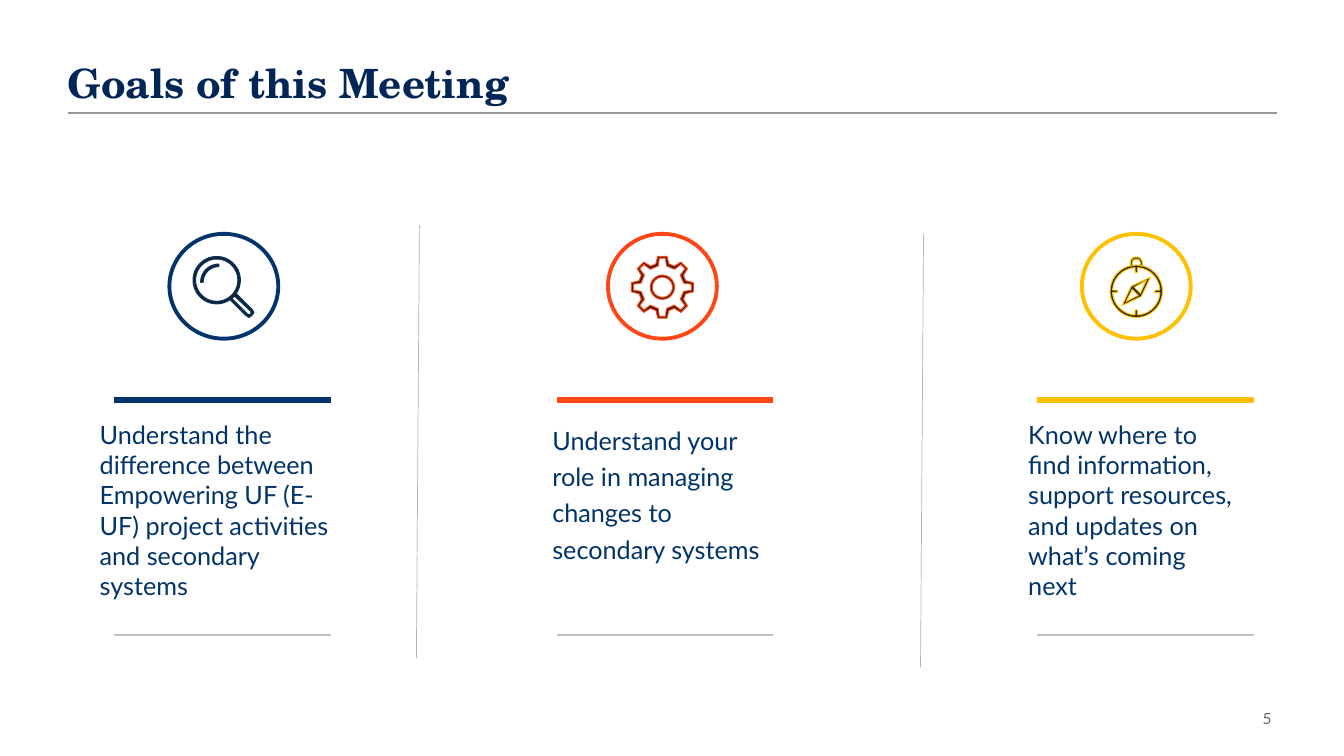
from math import cos, radians, sin

from lxml.etree import SubElement
from pptx import Presentation
from pptx.dml.color import RGBColor
from pptx.enum.shapes import MSO_CONNECTOR, MSO_SHAPE
from pptx.enum.text import MSO_ANCHOR, MSO_AUTO_SIZE, PP_ALIGN
from pptx.oxml.ns import qn
from pptx.util import Inches, Pt

NAVY, ORANGE, GOLD, INK = "00346A", "FF4616", "FFC000", "231F20"


def color(hex_value):
    return RGBColor.from_string(hex_value)


def add_line(page, start, end, hex_value, width):
    ends = [Inches(value) for value in (*start, *end)]
    line = page.shapes.add_connector(MSO_CONNECTOR.STRAIGHT, *ends)
    line.line.color.rgb = color(hex_value)
    line.line.width = Pt(width)
    SubElement(line._element.spPr, qn("a:effectLst"))


def paint(shape, fill, line, width):
    shape.shadow.inherit = False
    shape.fill.solid()
    shape.fill.fore_color.rgb = color(fill)
    shape.line.color.rgb = color(line)
    shape.line.width = Pt(width)


def write(frame, text, font, paragraph=None):
    para = frame.paragraphs[0]
    for name, value in (paragraph or {}).items():
        setattr(para, name, value)
    span = para.add_run()
    span.text = text
    span.font.color.rgb = color(font["color"])
    for name in ("name", "size", "bold"):
        setattr(span.font, name, font.get(name))


def add_text(page, area, text, font, paragraph=None):
    box = page.shapes.add_textbox(*[Inches(value) for value in area])
    box.text_frame.word_wrap = True
    write(box.text_frame, text, font, paragraph)
    return box


def arc(x, y, radius, start=0, end=360, steps=40):
    """Points along an arc, in degrees clockwise from the right."""
    angles = [radians(start + (end - start) * i / steps) for i in range(steps + 1)]
    return [(x + radius * cos(a), y + radius * sin(a)) for a in angles]


def add_outline(page, center, contours, line):
    """Contours inside other contours become holes."""
    def place(points):
        return [(Inches(center[0] + x), Inches(center[1] + y)) for x, y in points]

    first, *holes = [place(points) for points in contours]
    builder = page.shapes.build_freeform(*first[0])
    builder.add_line_segments(first[1:], close=True)
    for points in holes:
        builder.move_to(*points[0])
        builder.add_line_segments(points[1:], close=True)
    paint(builder.convert_to_shape(), INK, line, 0.75)


def draw_magnifier(page, center, line):
    handle = [(0.13, 0.08), (0.28, 0.23), (0.3, 0.26), (0.28, 0.29),
              (0.25, 0.31), (0.22, 0.29), (0.07, 0.14)]
    handle_hole = [(0.08, 0.12), (0.11, 0.1), (0.27, 0.25), (0.27, 0.28), (0.24, 0.28)]
    lens = arc(-0.07, -0.06, 0.235, 54, 394)
    add_outline(page, center, [lens + handle, arc(-0.07, -0.06, 0.21), handle_hole], line)
    glint = arc(-0.05, -0.04, 0.18, 180, 270) + arc(-0.05, -0.04, 0.155, 270, 180)
    add_outline(page, center, [glint], line)


def gear_edge(tip, tip_angle, base, base_angle):
    """Eight teeth, each given by its tip and base radius and half angles."""
    corners = [(base, -base_angle), (tip, -tip_angle), (tip, tip_angle), (base, base_angle)]
    return [(radius * cos(radians(45 * tooth + angle)), radius * sin(radians(45 * tooth + angle)))
            for tooth in range(8) for radius, angle in corners]


def draw_gear(page, center, line):
    center = (center[0], center[1] + 0.01)
    add_outline(page, center, [arc(0, 0, 0.12), arc(0, 0, 0.1)], line)
    add_outline(page, center, [gear_edge(0.31, 8.5, 0.24, 15.5),
                               gear_edge(0.29, 6, 0.215, 11)], line)


def draw_compass(page, center, line):
    dial = []
    for quarter in range(0, 360, 90):
        dial += arc(0, 0.05, 0.235, quarter + 3, quarter + 87)
        dial += arc(0, 0.05, 0.185, quarter + 87, quarter + 93, 1)
    add_outline(page, center, [arc(0, 0.05, 0.26), dial], line)
    loop = arc(0, -0.23, 0.06, 150, 390) + arc(0, -0.23, 0.04, 390, 150)
    add_outline(page, center, [loop], line)
    needle = [(0.14, -0.09), (0.05, 0.1), (-0.14, 0.19), (-0.05, 0)]
    south = [(-0.1, 0.15), (-0.04, 0.03), (0.02, 0.09)]
    north = [(0.04, 0.07), (-0.02, 0.01), (0.1, -0.06)]
    add_outline(page, center, [needle, south, north], line)


def add_badge(page, left, top, draw_icon, line):
    width, height = 1.08, 1.04
    area = [Inches(value) for value in (left, top, width, height)]
    paint(page.shapes.add_shape(MSO_SHAPE.OVAL, *area), "FFFFFF", line, 2.75)
    draw_icon(page, (left + width / 2, top + height / 2), line)


def add_goal(page, left, top, goal):
    """A badge over a text held between two rules that start at left."""
    add_badge(page, left + goal["badge"], top, goal["icon"], goal["color"])
    for drop, hex_value, width in ((1.65, goal["color"], 4.5), (3.98, "BFBFBF", 1.5)):
        add_line(page, (left, top + drop), (left + 2.15, top + drop), hex_value, width)
    shift, width, height = goal["text_area"]
    box = add_text(page, (left + shift, top + 1.79, width, height), goal["text"],
                   {"name": "Lato", "size": Pt(18), "color": NAVY}, goal.get("paragraph"))
    if "indent" in goal:
        properties = box.text_frame.paragraphs[0]._p.get_or_add_pPr()
        properties.set("marL", str(Inches(goal["indent"])))
        properties.set("indent", "0")


def add_heading(page, left, top, width, text):
    title = page.shapes.title
    area = {"left": left, "top": top, "width": width, "height": 0.49}
    for name, value in area.items():
        setattr(title, name, Inches(value))
    frame = title.text_frame
    settings = {"margin_left": 0, "margin_right": Inches(0.1), "margin_top": Inches(0.05),
                "margin_bottom": Inches(0.05), "vertical_anchor": MSO_ANCHOR.MIDDLE,
                "word_wrap": True, "auto_size": MSO_AUTO_SIZE.NONE}
    for name, value in settings.items():
        setattr(frame, name, value)
    write(frame, text,
          {"name": "TeX Gyre Schola", "size": Pt(28.8), "bold": True, "color": "002657"},
          {"alignment": PP_ALIGN.LEFT, "line_spacing": 0.9})
    add_line(page, (left, top + 0.52), (left + width, top + 0.52), "949896", 1)


def main():
    deck = Presentation()
    deck.slide_width, deck.slide_height = Inches(13.33), Inches(7.5)
    page = deck.slides.add_slide(deck.slide_layouts[5])
    add_heading(page, 0.67, 0.6, 12, "Goals of this Meeting")

    goals = [
        {"left": 1.13, "badge": 0.55, "icon": draw_magnifier, "color": NAVY,
         "text_area": (-0.24, 2.65, 1.92),
         "text": "Understand the difference between Empowering UF (E-UF) "
                 "project activities and secondary systems"},
        {"left": 5.52, "badge": 0.51, "icon": draw_gear, "color": ORANGE,
         "text_area": (-0.26, 2.62, 1.53), "indent": 0.12,
         "paragraph": {"line_spacing": 1.2, "space_after": Pt(10)},
         "text": "Understand your role in managing changes to secondary systems"},
        {"left": 10.29, "badge": 0.44, "icon": draw_compass, "color": GOLD,
         "text_area": (-0.19, 2.3, 1.92),
         "text": "Know where to find information, support resources, "
                 "and updates on what’s coming next"},
    ]
    for goal in goals:
        add_goal(page, goal["left"], 2.32, goal)
    for left, top in ((4.13, 2.23), (9.13, 2.32)):
        add_line(page, (left + 0.03, top), (left, top + 4.3), "B4B4B4", 0.5)

    add_text(page, (11.9, 6.99, 0.81, 0.29), "5",
             {"name": "Lato", "size": Pt(11), "color": "626664"},
             {"alignment": PP_ALIGN.RIGHT})
    deck.save("out.pptx")


if __name__ == "__main__":
    main()
